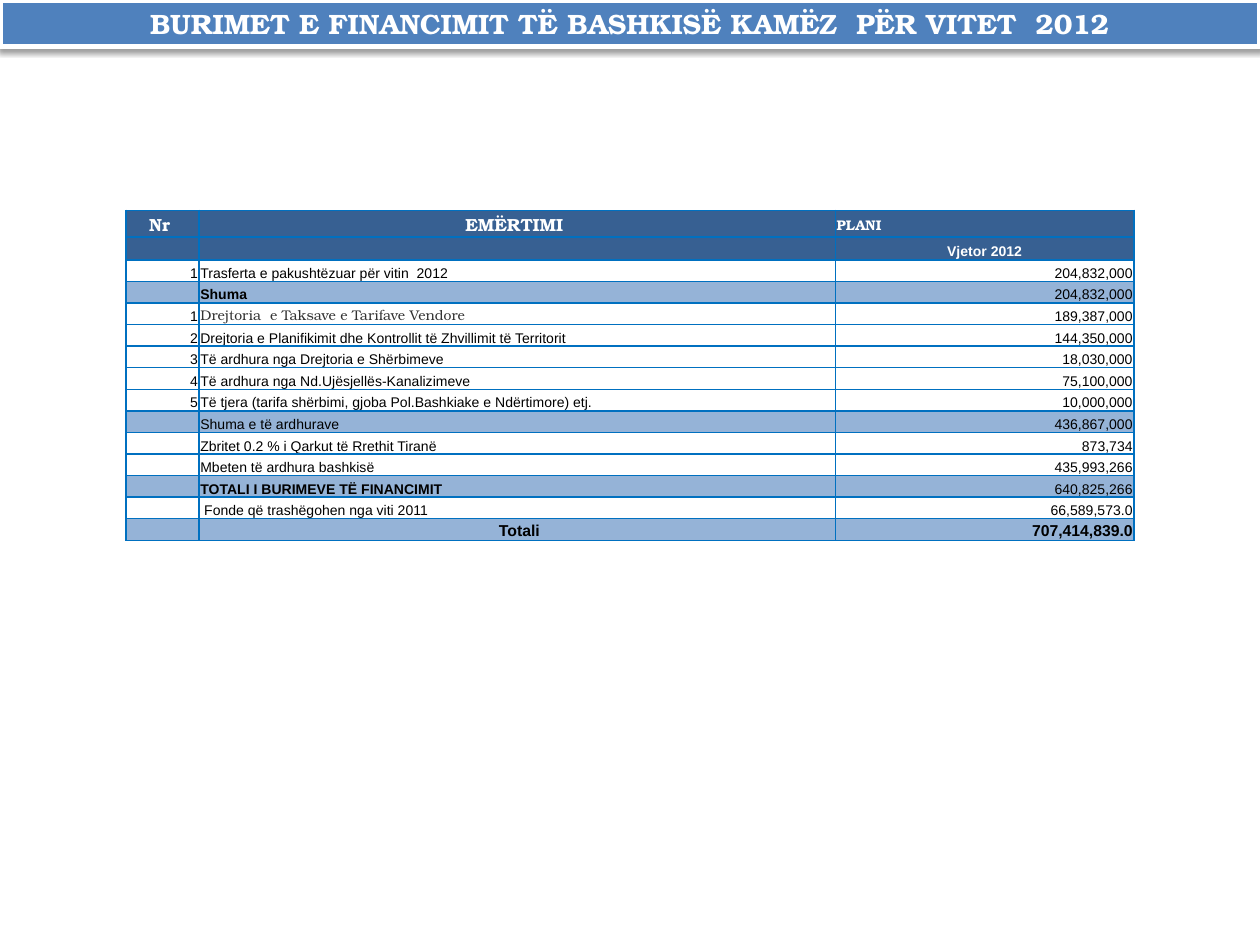
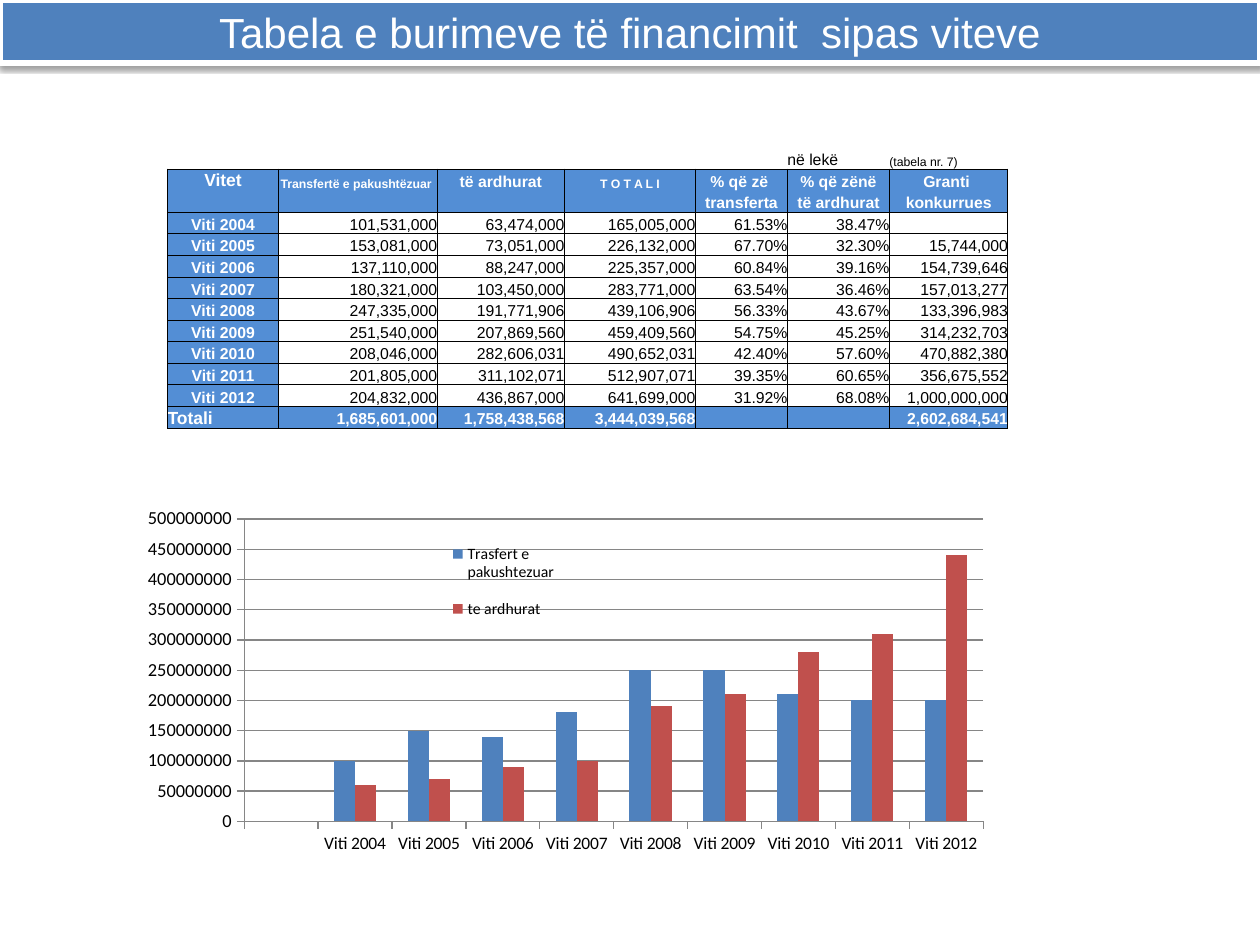
from pptx import Presentation
from pptx.chart.data import CategoryChartData
from pptx.dml.color import RGBColor
from pptx.enum.chart import XL_CHART_TYPE as Chart, XL_LEGEND_POSITION as LegendPos, XL_TICK_MARK as Tick
from pptx.enum.text import MSO_ANCHOR as Anchor, MSO_AUTO_SIZE as AutoSize, PP_ALIGN as Align
from pptx.oxml import parse_xml
from pptx.oxml.ns import nsdecls, qn
from pptx.util import Inches, Pt

# Shared look
rgb = RGBColor.from_string
BLUE, RED, WHITE, BLACK = "4F81BD", "C0504D", "FFFFFF", "000000"
SERIF, SANS, CHART_FONT = "TeX Gyre Bonum", "Arial", "Calibri"
LEFT, CENTER, RIGHT = Align.LEFT, Align.CENTER, Align.RIGHT
ROW_H = Inches(2.23 / 13)

prs = Presentation()
prs.slide_width, prs.slide_height = Inches(10), Inches(7.5)


def add_titled_slide(title, height, size, font, bold):
    """Add a slide whose title is a shadowed blue band across the top."""
    s = prs.slides.add_slide(prs.slide_layouts[5])
    sp = s.shapes.title
    sp.left, sp.top, sp.width, sp.height = 0, 0, prs.slide_width, Inches(height)
    sp.fill.solid()
    sp.fill.fore_color.rgb = rgb(BLUE)
    sp.line.color.rgb = rgb(WHITE)
    sp.line.width = Pt(3)
    sp._element.spPr.append(parse_xml(
        f'<a:effectLst {nsdecls("a")}><a:outerShdw blurRad="40000" dist="20000" dir="5400000" '
        f'rotWithShape="0"><a:srgbClr val="{BLACK}"><a:alpha val="38000"/></a:srgbClr>'
        '</a:outerShdw></a:effectLst>'))
    tf = sp.text_frame
    tf.text = title
    tf.word_wrap = True
    tf.auto_size = AutoSize.NONE
    tf.vertical_anchor = Anchor.MIDDLE
    p = tf.paragraphs[0]
    p.alignment = CENTER
    f = p.runs[0].font
    f.name, f.size, f.bold, f.color.rgb = font, Pt(size), bold, rgb(WHITE)
    return s


def set_cell(cell, text, size, align, fill=WHITE, color=BLACK, bold=False, font=SANS,
             anchor=Anchor.BOTTOM, inset=0, edges="LRTB", edge=(BLACK, 0.5)):
    """Write and format one table cell; edges names the sides that are drawn."""
    cell.margin_left = cell.margin_right = cell.margin_top = Inches(inset)
    cell.margin_bottom = 0
    cell.vertical_anchor = anchor
    tc_pr = cell._tc.get_or_add_tcPr()
    for side in "LRTB":
        paint = f'<a:solidFill><a:srgbClr val="{edge[0]}"/></a:solidFill>' if side in edges else "<a:noFill/>"
        tc_pr.append(parse_xml(f'<a:ln{side} {nsdecls("a")} w="{Pt(edge[1])}">{paint}</a:ln{side}>'))
    cell.fill.solid()
    cell.fill.fore_color.rgb = rgb(fill)
    p = cell.text_frame.paragraphs[0]
    p.alignment = align
    if text:
        p.text = text
        f = p.runs[0].font
        f.name, f.size, f.bold, f.color.rgb = font, Pt(size), bold, rgb(color)
    else:
        p._p.append(parse_xml(f'<a:endParaRPr {nsdecls("a")} sz="{size * 100}"/>'))


# Slide 1: funding sources for 2012
s = add_titled_slide("BURIMET E FINANCIMIT TË BASHKISË KAMËZ  PËR VITET  2012", 0.37, 16, SERIF, True)
HEAD, SUM = "376092", "95B3D7"
sources = [
    ("1", "Trasferta e pakushtëzuar për vitin  2012", "204,832,000"),
    ("", "Shuma", "204,832,000"),
    ("1", "Drejtoria  e Taksave e Tarifave Vendore", "189,387,000"),
    ("2", "Drejtoria e Planifikimit dhe Kontrollit të Zhvillimit të Territorit", "144,350,000"),
    ("3", "Të ardhura nga Drejtoria e Shërbimeve", "18,030,000"),
    ("4", "Të ardhura nga Nd.Ujësjellës-Kanalizimeve", "75,100,000"),
    ("5", "Të tjera (tarifa shërbimi, gjoba Pol.Bashkiake e Ndërtimore) etj.", "10,000,000"),
    ("", "Shuma e të ardhurave", "436,867,000"),
    ("", "Zbritet 0.2 % i Qarkut të Rrethit Tiranë", "873,734"),
    ("", "Mbeten të ardhura bashkisë", "435,993,266"),
    ("", "TOTALI I BURIMEVE TË FINANCIMIT", "640,825,266"),
    ("", " Fonde që trashëgohen nga viti 2011", "66,589,573.0"),
    ("", " Totali", "707,414,839.0"),
]
table = s.shapes.add_table(len(sources) + 2, 3, Inches(1), Inches(1.67), Inches(8), Inches(2.59)).table
table.first_row = table.horz_banding = False
for col, width in zip(table.columns, (0.58, 5.05, 2.37)):
    col.width = Inches(width)
for i, row in enumerate(table.rows):
    row.height = Inches(0.18) if i < 2 else ROW_H

grid = dict(inset=0.01, edge=("0070C0", 1))
head = dict(grid, fill=HEAD, color=WHITE, bold=True)
set_cell(table.cell(0, 0), "Nr ", 10, CENTER, font=SERIF, **head)
set_cell(table.cell(0, 1), "EMËRTIMI ", 10, CENTER, font=SERIF, **head)
set_cell(table.cell(0, 2), "PLANI", 8, LEFT, font=SERIF, anchor=Anchor.MIDDLE, **head)
for c, text in enumerate(("", "", "Vjetor 2012")):
    set_cell(table.cell(1, c), text, 8, CENTER, **head)

for i, (nr, name, amount) in enumerate(sources, 2):
    key = name.strip().lower()
    last = key == "totali"
    size = 9 if last else 8
    look = dict(grid, fill=SUM if key.startswith(("shuma", "total")) else WHITE)
    tax = key.endswith("vendore")
    set_cell(table.cell(i, 0), nr, 8, RIGHT, **look)
    set_cell(table.cell(i, 1), name, size, CENTER if last else LEFT,
             bold=key == "shuma" or key.startswith("total"),
             font=SERIF if tax else SANS, color="333333" if tax else BLACK, **look)
    set_cell(table.cell(i, 2), amount, size, RIGHT, bold=last, **look)

# Slide 2: funding sources by year
s = add_titled_slide("Tabela e burimeve të financimit  sipas viteve", 0.5, 24, SANS, False)
YEAR_BLUE = "538ED5"
headings = [
    ("Vitet", "", 10), ("Transfertë e pakushtëzuar ", "", 7), ("të ardhurat", "", 9), ("T O T A L I", "", 7),
    ("% që zë ", "transferta", 9), ("% që zënë", "të ardhurat", 9), ("Granti ", "konkurrues", 9),
]
years = [
    ("Viti 2004", "101,531,000", "63,474,000", "165,005,000", "61.53%", "38.47%", ""),
    ("Viti 2005", "153,081,000", "73,051,000", "226,132,000", "67.70%", "32.30%", "15,744,000"),
    ("Viti 2006", "137,110,000", "88,247,000", "225,357,000", "60.84%", "39.16%", "154,739,646"),
    ("Viti 2007", "180,321,000", "103,450,000", "283,771,000", "63.54%", "36.46%", "157,013,277"),
    ("Viti 2008", "247,335,000", "191,771,906", "439,106,906", "56.33%", "43.67%", "133,396,983"),
    ("Viti 2009", "251,540,000", "207,869,560", "459,409,560", "54.75%", "45.25%", "314,232,703"),
    ("Viti 2010", "208,046,000", "282,606,031", "490,652,031", "42.40%", "57.60%", "470,882,380"),
    ("Viti 2011", "201,805,000", "311,102,071", "512,907,071", "39.35%", "60.65%", "356,675,552"),
    ("Viti 2012", "204,832,000", "436,867,000", "641,699,000", "31.92%", "68.08%", "1,000,000,000"),
]
totals = ("Totali", "1,685,601,000", "1,758,438,568", "3,444,039,568", "", "", "2,602,684,541")
table = s.shapes.add_table(13, 7, Inches(1.33), Inches(1.17), Inches(6.67), Inches(2.23)).table
table.first_row = table.horz_banding = False
for col, width in zip(table.columns, (0.88, 1.26, 1.01, 1.04, 0.73, 0.81, 0.94)):
    col.width = Inches(width)
for row in table.rows:
    row.height = ROW_H

# Unit line and two-line headings
blue = dict(fill=YEAR_BLUE, color=WHITE, bold=True)
units = {5: ("në lekë", 9), 6: ("(tabela nr. 7)", 7)}
for c, (top, bottom, size) in enumerate(headings):
    set_cell(table.cell(0, c), *units.get(c, ("", 9)), LEFT, edges="B")
    set_cell(table.cell(1, c), top, size, CENTER, edges="LRT", **blue)
    set_cell(table.cell(2, c), bottom, 9, CENTER, edges="LRB", **blue)
table.cell(0, 0).merge(table.cell(0, 1))
table.cell(0, 2).merge(table.cell(0, 4))

# Years and totals
for i, values in enumerate(years, 3):
    for c, text in enumerate(values):
        set_cell(table.cell(i, c), text, 9, RIGHT if c else CENTER, **({} if c else blue))
for c, text in enumerate(totals):
    set_cell(table.cell(12, c), text, 9 if c else 10, RIGHT if c else LEFT, **blue)

# Chart of transfers and own income to the nearest ten million, with an empty first category
data = CategoryChartData(number_format="General")
data.categories = [""] + [y[0] for y in years]
for name, c in (("Trasfert e pakushtezuar ", 1), ("te ardhurat", 2)):
    data.add_series(name, [None] + [round(int(y[c].replace(",", "")), -7) for y in years])
chart = s.shapes.add_chart(Chart.COLUMN_CLUSTERED, Inches(1), Inches(4), Inches(7.82), Inches(3), data).chart
chart.has_title = False
chart.font.name, chart.font.size, chart.font.color.rgb = CHART_FONT, Pt(10), rgb(BLACK)
plot = chart.plots[0]
plot.gap_width, plot.overlap, plot.vary_by_categories = 150, 0, False
for series, color in zip(plot.series, (BLUE, RED)):
    series.format.fill.solid()
    series.format.fill.fore_color.rgb = rgb(color)

val, cat = chart.value_axis, chart.category_axis
val.minimum_scale, val.maximum_scale, val.major_unit = 0, 500_000_000, 50_000_000
val.has_major_gridlines = True
val.tick_labels.number_format = "General"
val.tick_labels.number_format_is_linked = False
for axis, size in ((val, 10.5), (cat, 10)):
    axis.major_tick_mark = Tick.OUTSIDE
    f = axis.tick_labels.font
    f.name, f.size, f.color.rgb = CHART_FONT, Pt(size), rgb(BLACK)
for lines in (val, cat, val.major_gridlines):
    lines.format.line.color.rgb = rgb("868686")
    lines.format.line.width = Pt(0.75)

chart.has_legend = True
legend = chart.legend
legend.position = LegendPos.RIGHT
legend.include_in_layout = False
f = legend.font
f.name, f.size, f.color.rgb = CHART_FONT, Pt(9), rgb(BLACK)

# Plot area and legend placed as shares of the chart
plot_area = chart._chartSpace.chart.plotArea
for parent, index, target, box in (
        (plot_area, 0, '<c:layoutTarget val="inner"/>', (0.12, 0.04, 0.75, 0.8)),
        (legend._element, 1, "", (0.31, 0.06, 0.15, 0.29))):
    for old in parent.findall(qn("c:layout")):
        parent.remove(old)
    modes = '<c:xMode val="edge"/><c:yMode val="edge"/>'
    sizes = "".join(f'<c:{k} val="{v}"/>' for k, v in zip("xywh", box))
    parent.insert(index, parse_xml(
        f'<c:layout {nsdecls("c")}><c:manualLayout>{target}{modes}{sizes}</c:manualLayout></c:layout>'))

prs.save("out.pptx")
